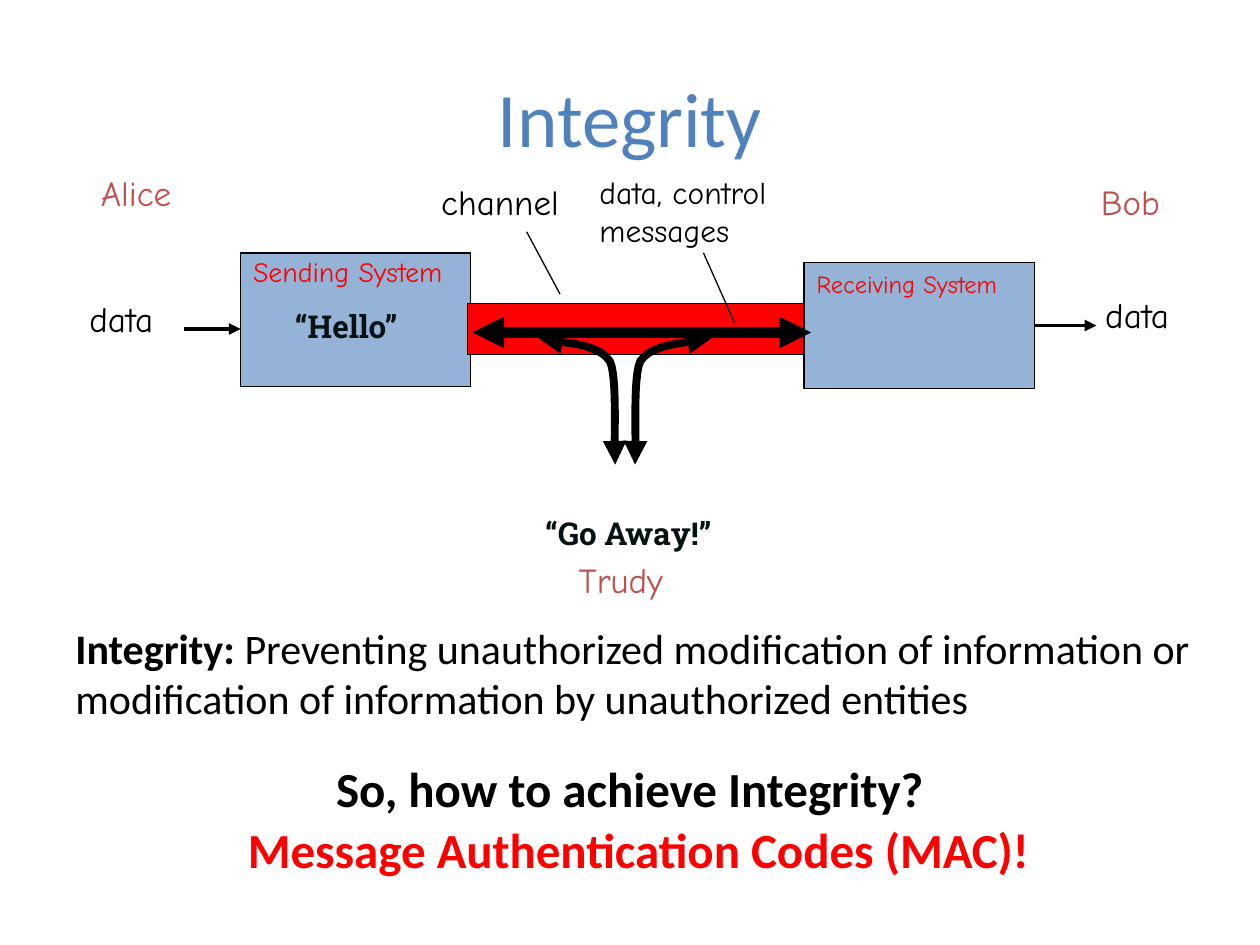
from lxml import etree
from pptx import Presentation
from pptx.dml.color import RGBColor
from pptx.enum.shapes import MSO_CONNECTOR, MSO_SHAPE
from pptx.enum.text import MSO_ANCHOR, MSO_AUTO_SIZE, PP_ALIGN
from pptx.oxml.ns import qn
from pptx.util import Pt

RECT = MSO_SHAPE.RECTANGLE
STRAIGHT = MSO_CONNECTOR.STRAIGHT
TOP, MIDDLE = MSO_ANCHOR.TOP, MSO_ANCHOR.MIDDLE
GROW = MSO_AUTO_SIZE.SHAPE_TO_FIT_TEXT
LEFT, CENTER = PP_ALIGN.LEFT, PP_ALIGN.CENTER

COLORS = {
    "title": "4F81BD",
    "system": "95B3D7",
    "red": "FF0000",
    "person": "C0504D",
    "black": "000000",
    "quote": "071215",
}
BODY, HAND, SLAB = "Calibri", "Comic Neue", "Roboto Slab"


def rgb(name):
    return RGBColor.from_string(COLORS[name])


def style(para, size, face, color, bold=False):
    font = para.font
    font.size, font.name, font.bold = Pt(size), face, bold
    font.color.rgb = rgb(color)


def add_label(slide, text, box, size, face, color="black", bold=False, wrap=False):
    label = slide.shapes.add_textbox(*map(Pt, box))
    frame = label.text_frame
    frame.word_wrap = wrap
    frame.auto_size = GROW
    frame.text = text
    style(frame.paragraphs[0], size, face, color, bold)
    return label


def add_box(slide, box, fill):
    rect = slide.shapes.add_shape(RECT, *map(Pt, box))
    rect.shadow.inherit = False
    rect.fill.solid()
    rect.fill.fore_color.rgb = rgb(fill)
    rect.line.color.rgb = rgb("black")
    rect.line.width = Pt(0.75)
    return rect


def add_system(slide, text, box, size, inset):
    rect = add_box(slide, box, "system")
    frame = rect.text_frame
    frame.word_wrap = False
    frame.vertical_anchor = TOP
    frame.margin_top = Pt(inset)
    frame.text = text
    para = frame.paragraphs[0]
    para.alignment = LEFT
    style(para, size, HAND, "red")
    return rect


def set_line(shape, width, ends):
    shape.line.color.rgb = rgb("black")
    shape.line.width = Pt(width)
    line = shape.line._get_or_add_ln()
    for end in ends:
        etree.SubElement(line, qn(f"a:{end}"), type="triangle")


def add_line(slide, start, stop, width=0.75, ends=()):
    line = slide.shapes.add_connector(STRAIGHT, *map(Pt, start + stop))
    set_line(line, width, ends)
    etree.SubElement(line._element.spPr, qn("a:effectLst"))
    return line


def bezier(knots, steps=12):
    """Points on a cubic curve, without its first point."""
    for i in range(1, steps + 1):
        t = i / steps
        u = 1 - t
        parts = (u**3, 3 * u * u * t, 3 * u * t * t, t**3)
        yield tuple(sum(w * k[axis] for w, k in zip(parts, knots)) for axis in (0, 1))


def add_curve(slide, knots):
    points = [*bezier(knots[:4]), *bezier(knots[3:])]
    x, y = knots[0]
    build = slide.shapes.build_freeform(round(x * 100), round(y * 100), scale=Pt(1) / 100)
    build.add_line_segments([(round(x * 100), round(y * 100)) for x, y in points], close=False)
    curve = build.convert_to_shape()
    curve.shadow.inherit = False
    curve.fill.background()
    set_line(curve, 4.5, ("headEnd", "tailEnd"))


def main():
    prs = Presentation()
    prs.slide_width, prs.slide_height = Pt(720), Pt(540)
    slide = prs.slides.add_slide(prs.slide_layouts[6])

    # Title
    title = add_label(slide, "Integrity", (36, 21.6, 648, 90), 44, BODY, "title", wrap=True)
    title.text_frame.auto_size = MSO_AUTO_SIZE.NONE
    title.text_frame.vertical_anchor = MIDDLE
    title.text_frame.paragraphs[0].alignment = CENTER

    # Systems and the channel between them
    add_system(slide, "Sending System", (137.5, 144.5, 131.5, 76.5), 16, 1)
    bob = add_system(slide, "Receiving System", (459.5, 150, 131.5, 72), 14, 4)
    add_box(slide, (267, 173.5, 192.5, 29), "red")
    both = ("headEnd", "tailEnd")
    add_line(slide, (270, 190), (463.5, 190), 6, both)

    # Trudy's two taps, mirrored about the middle
    tap = [(308, 193.5), (314.5, 196), (341, 194.5), (348.5, 206.5),
           (353, 216), (350.5, 252.5), (351.5, 265.5)]
    axis = 357.2
    add_curve(slide, tap)
    add_curve(slide, [(2 * axis - x, y) for x, y in tap])

    # Pointers and data arrows
    add_line(slide, (301, 132.5), (320, 168))
    add_line(slide, (402, 144.5), (420, 185))
    add_line(slide, (105, 188), (137.5, 188), 2.25, ("tailEnd",))
    out = add_line(slide, (591, 186), (626.5, 186), 2.25, ("tailEnd",))
    out.begin_connect(bob, 3)

    # Handwritten labels
    for text, box, color in (
        ("channel", (245, 99.5, 98, 36), "black"),
        ("data", (44, 166.5, 64, 36), "black"),
        ("data", (624.5, 164, 64, 36), "black"),
        ("Alice", (50.5, 94.5, 70.5, 36), "person"),
        ("Bob", (622, 99.5, 56, 36), "person"),
        ("Trudy", (323.5, 315.5, 81.5, 36), "person"),
    ):
        add_label(slide, text, box, 20, HAND, color)
    add_label(slide, "data, control messages", (335.5, 95.5, 149, 50.5), 18, HAND, wrap=True)

    # Messages
    add_label(slide, "“Hello”", (161.5, 172, 83.5, 29), 18, SLAB, "quote", True)
    add_label(slide, "“Go Away!”", (304.5, 290, 121.5, 29), 18, SLAB, "quote", True)

    # Definition and answer
    note = add_label(slide, "Integrity: ", (36, 352, 664.5, 65.5), 24, BODY, wrap=True)
    para = note.text_frame.paragraphs[0]
    para.runs[0].font.bold = True
    para.add_run().text = ("Preventing unauthorized modification of information or "
                           "modification of information by unauthorized entities")
    add_label(slide, "So, how to achieve Integrity?", (185, 430, 354, 41), 28, BODY, bold=True)
    add_label(slide, "Message Authentication Codes (MAC)!", (134.5, 465, 466.5, 41),
              28, BODY, "red", True)

    prs.save("out.pptx")


if __name__ == "__main__":
    main()
